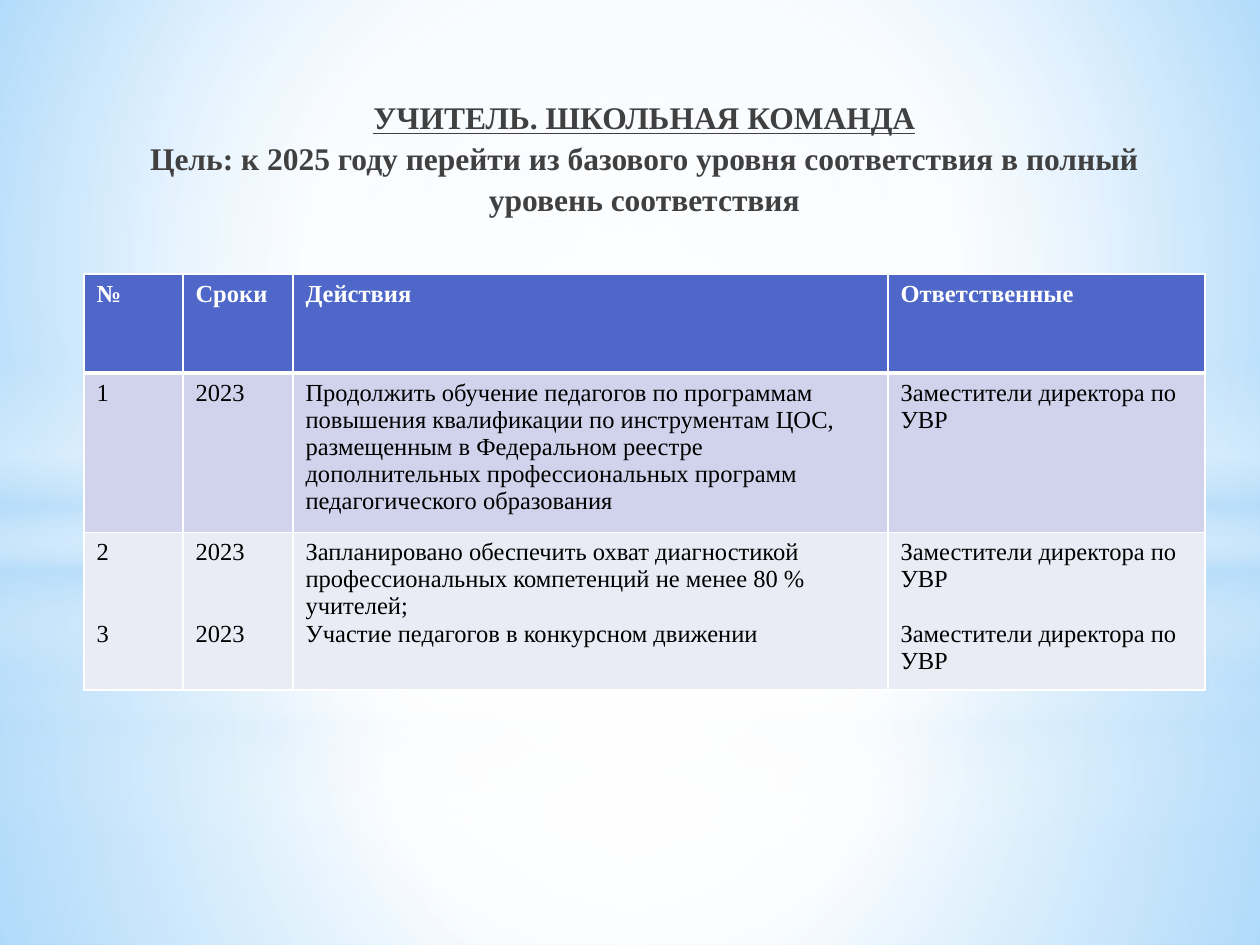
import pptx
import pptx.dml.color
import pptx.enum.shapes
import pptx.enum.text
import pptx.oxml
import pptx.oxml.ns
import pptx.util

PX_PER_INCH = 126
FONT = "Times New Roman"
WHITE, SKY = "FFFFFF", "B4DCFA"
COLUMNS = [99, 110, 595, 317]
ROWS = [99, 148, 148]
ROW_FILLS = ["4E67C8", "D0D3EB", "E9EBF5"]
LINE = 15.5
DEPUTIES = "Заместители директора по УВР"
CELLS = [
    [["№"], ["Сроки"], ["Действия"], ["Ответственные"]],
    [["1"], ["2023"],
     ["Продолжить обучение педагогов по программам повышения квалификации "
      "по инструментам ЦОС, размещенным в Федеральном реестре дополнительных "
      "профессиональных программ педагогического образования"],
     [DEPUTIES]],
    [["2", "3"], ["2023", "2023"],
     ["Запланировано обеспечить охват диагностикой профессиональных "
      "компетенций не менее 80 % учителей;",
      "Участие педагогов в конкурсном движении"],
     [DEPUTIES, DEPUTIES]],
]
SECOND_ITEM_GAPS = [2 * LINE, 2 * LINE, 0, LINE]
CENTRE = (50, 50, 50, 50)


def px(length):
    """Turn pixels into EMU."""
    return pptx.util.Inches(length / PX_PER_INCH)


def color(value):
    """Turn a hex string into a colour."""
    return pptx.dml.color.RGBColor.from_string(value)


def set_gradient(owner, fill, stops, focus=None):
    """Fill with (position, colour, opacity) stops, radial around focus or vertical."""
    fill.gradient()
    old = next(owner.element.iter(pptx.oxml.ns.qn("a:gradFill")))
    marks = "".join(
        f'<a:gs pos="{position * 1000}"><a:srgbClr val="{value}">'
        f'<a:alpha val="{opacity * 1000}"/></a:srgbClr></a:gs>'
        for position, value, opacity in stops)
    direction = '<a:lin ang="5400000" scaled="0"/>'
    if focus:
        sides = " ".join(f'{side}="{value * 1000}"' for side, value in zip("ltrb", focus))
        direction = f'<a:path path="circle"><a:fillToRect {sides}/></a:path>'
    new = pptx.oxml.parse_xml(
        f'<a:gradFill {pptx.oxml.ns.nsdecls("a")} rotWithShape="1">'
        f'<a:gsLst>{marks}</a:gsLst>{direction}</a:gradFill>')
    old.getparent().replace(old, new)


def add_layer(page, kind, top, height, stops, focus=None):
    """Add a full-width translucent layer."""
    layer = page.shapes.add_shape(kind, 0, px(top), px(10 * PX_PER_INCH), px(height))
    layer.shadow.inherit = False
    layer.line.fill.background()
    set_gradient(layer, layer.fill, stops, focus)


def add_backdrop(page):
    """Paint the background and its two sets of glow layers."""
    set_gradient(page, page.background.fill,
                 [(0, "9ED5FF", 100), (60, WHITE, 100), (100, "5BB9FF", 100)],
                 (20, 10, 20, 60))
    shapes = pptx.enum.shapes.MSO_SHAPE
    band = [(0, WHITE, 0), (29, WHITE, 30), (45, SKY, 40),
            (55, WHITE, 26), (65, SKY, 60), (100, WHITE, 0)]
    for horizon, band_top, extra, glow_end in [(703, 519, 0, 56), (533, 365, 1, 54)]:
        lower = [(0, WHITE, 91 + extra), (37, WHITE, 76 + extra), (100, SKY, 79 + extra)]
        upper = [(0, WHITE, 89 + extra), (48, WHITE, 62 + extra), (100, SKY, 79 + extra)]
        add_layer(page, shapes.RECTANGLE, horizon, 945 - horizon, lower, CENTRE)
        add_layer(page, shapes.RECTANGLE, 0, horizon, upper, CENTRE)
        add_layer(page, shapes.RECTANGLE, band_top, 315, band)
        add_layer(page, shapes.OVAL, 220, 703,
                  [(0, WHITE, 100), (glow_end, WHITE, 0)], CENTRE)


def style_span(span, size, value, bold):
    """Set the font of a run."""
    span.font.name = FONT
    span.font.size = pptx.util.Pt(size)
    span.font.bold = bold
    span.font.color.rgb = color(value)


def add_title(page):
    """Add the centred heading with its underlined first line."""
    box = page.shapes.add_textbox(px(84), px(76), px(1121), px(148))
    frame = box.text_frame
    frame.word_wrap = True
    frame.vertical_anchor = pptx.enum.text.MSO_ANCHOR.BOTTOM
    para = frame.paragraphs[0]
    para.text = ("УЧИТЕЛЬ. ШКОЛЬНАЯ КОМАНДА\v"
                 "Цель: к 2025 году перейти из базового уровня соответствия "
                 "в полный уровень соответствия")
    para.alignment = pptx.enum.text.PP_ALIGN.CENTER
    para.line_spacing = 1.08
    for span in para.runs:
        style_span(span, 18, "404040", True)
    para.runs[0].font.underline = True


def set_borders(cell, top, bottom):
    """Draw white cell borders with the given top and bottom widths in points."""
    properties = cell._tc.get_or_add_tcPr()
    for side, width in [("L", 1), ("R", 1), ("T", top), ("B", bottom)]:
        properties.append(pptx.oxml.parse_xml(
            f'<a:ln{side} {pptx.oxml.ns.nsdecls("a")} w="{pptx.util.Pt(width)}">'
            f'<a:solidFill><a:srgbClr val="{WHITE}"/></a:solidFill></a:ln{side}>'))


def fill_cell(cell, items, row, gap):
    """Write a cell's paragraphs and set its look by row."""
    set_borders(cell, 3 if row == 1 else 1, 3 if row == 0 else 1)
    cell.fill.solid()
    cell.fill.fore_color.rgb = color(ROW_FILLS[row])
    cell.text_frame.text = "\n".join(items)
    for index, para in enumerate(cell.text_frame.paragraphs):
        if index:
            para.space_before = pptx.util.Pt(gap)
        for span in para.runs:
            style_span(span, 14, "000000" if row else WHITE, row == 0)


def add_plan(page):
    """Add the table of actions."""
    table = page.shapes.add_table(len(ROWS), len(COLUMNS), px(84), px(274),
                                  px(sum(COLUMNS)), px(sum(ROWS))).table
    table.horz_banding = False
    for column, width in zip(table.columns, COLUMNS):
        column.width = px(width)
    for row, height in enumerate(ROWS):
        table.rows[row].height = px(height)
        for column, items in enumerate(CELLS[row]):
            fill_cell(table.cell(row, column), items, row, SECOND_ITEM_GAPS[column])


def main():
    """Build and save the slide."""
    deck = pptx.Presentation()
    deck.slide_width = pptx.util.Inches(10)
    deck.slide_height = pptx.util.Inches(7.5)
    page = deck.slides.add_slide(deck.slide_layouts[6])
    add_backdrop(page)
    add_title(page)
    add_plan(page)
    deck.save("out.pptx")


if __name__ == "__main__":
    main()
